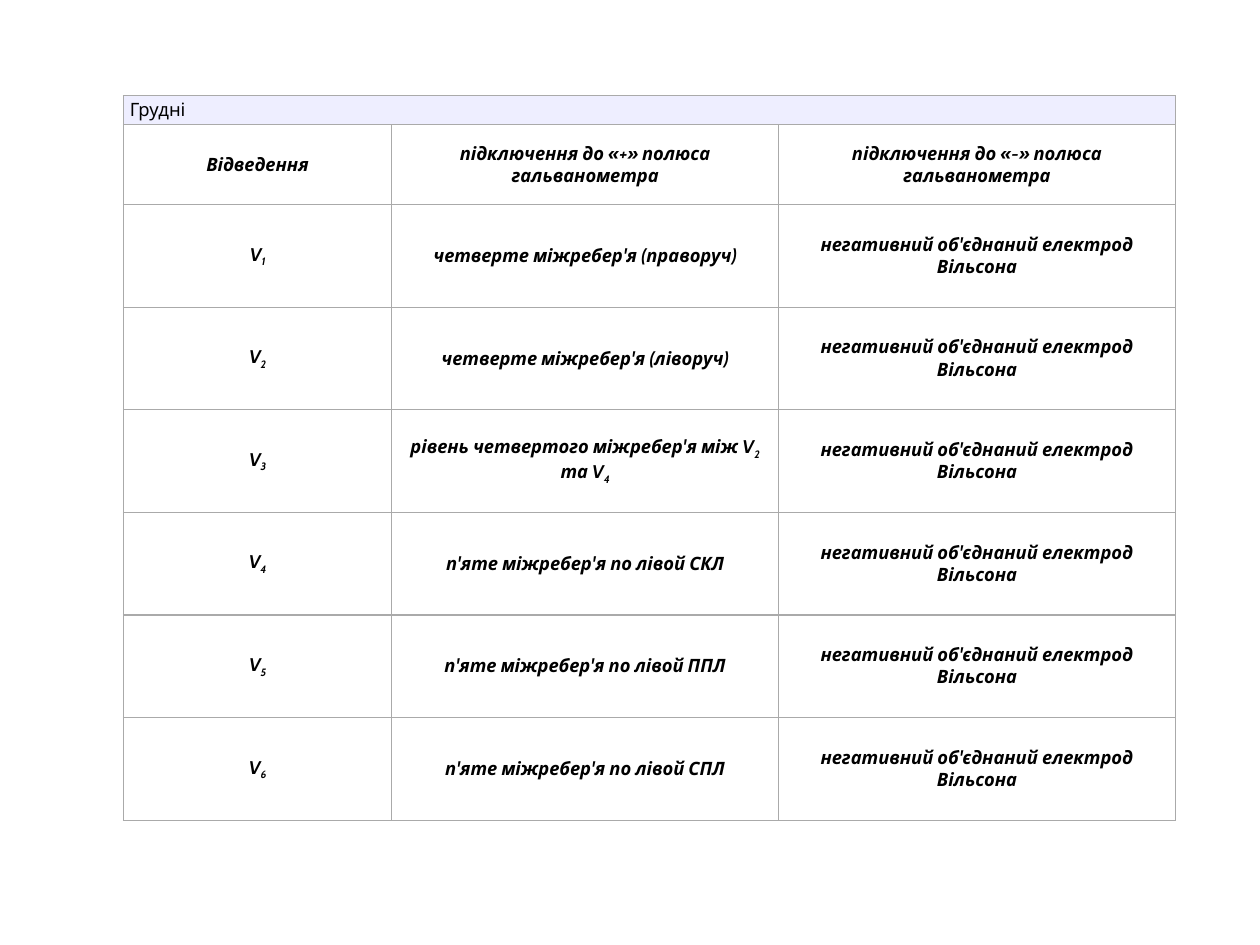
import pptx
import pptx.dml.color
import pptx.enum.text
import pptx.oxml.ns
import pptx.util
from lxml import etree
from pptx.util import Inches

COLORS = {"title": "EEEEFF", "body": "FFFFFF", "border": "AAAAAA", "text": "000000"}
TITLE = "Грудні"
HEADINGS = [
    "Відведення",
    "підключення до «+» полюса гальванометра",
    "підключення до «-» полюса гальванометра",
]
POSITIVE_POINTS = [
    "четверте міжребер'я (праворуч)",
    "четверте міжребер'я (ліворуч)",
    "рівень четвертого міжребер'я між V_2 та V_4",
    "п'яте міжребер'я по лівой СКЛ",
    "п'яте міжребер'я по лівой ППЛ",
    "п'яте міжребер'я по лівой СПЛ",
]
NEGATIVE_POINT = "негативний об'єднаний електрод Вільсона"
COLUMN_WIDTHS = [2.13, 3.07, 3.15]
ROW_HEIGHTS = [0.23, 0.63] + [0.81] * len(POSITIVE_POINTS)


def rgb(name):
    return pptx.dml.color.RGBColor.from_string(COLORS[name])


def add_span(para, text, bold=False, italic=False, subscript=False):
    span = para.add_run()
    span.text = text
    font = span.font
    font.name = "Cabin"
    font.size = pptx.util.Pt(10.5)
    font.bold = bold
    font.italic = italic
    font.color.rgb = rgb("text")
    if subscript:
        font._element.set("baseline", "-25000")


def write_text(para, text, align="CENTER", **style):
    para.alignment = getattr(pptx.enum.text.PP_ALIGN, align)
    first, *rest = text.split("_")
    add_span(para, first, **style)
    for part in rest:
        add_span(para, part[0], subscript=True, **style)
        if part[1:]:
            add_span(para, part[1:], **style)


def set_borders(cell):
    properties = cell._tc.get_or_add_tcPr()
    for side in ("a:lnL", "a:lnR", "a:lnT", "a:lnB"):
        line = etree.SubElement(
            properties, pptx.oxml.ns.qn(side), w=str(pptx.util.Pt(0.75))
        )
        fill = etree.SubElement(line, pptx.oxml.ns.qn("a:solidFill"))
        etree.SubElement(fill, pptx.oxml.ns.qn("a:srgbClr"), val=COLORS["border"])


def format_cell(cell, fill):
    cell.margin_left = cell.margin_right = Inches(0.05)
    cell.margin_top = cell.margin_bottom = Inches(0.02)
    cell.vertical_anchor = pptx.enum.text.MSO_ANCHOR.MIDDLE
    set_borders(cell)
    cell.fill.solid()
    cell.fill.fore_color.rgb = rgb(fill)


def add_leads_table(page, left, top, width, height):
    rows = [HEADINGS] + [
        [f"V_{number}", point, NEGATIVE_POINT]
        for number, point in enumerate(POSITIVE_POINTS, 1)
    ]
    table = page.shapes.add_table(
        len(ROW_HEIGHTS), len(COLUMN_WIDTHS), left, top, width, height
    ).table
    table.first_row = False
    table.horz_banding = False
    for column, share in zip(table.columns, COLUMN_WIDTHS):
        column.width = int(width * share / sum(COLUMN_WIDTHS))
    for row, share in zip(table.rows, ROW_HEIGHTS):
        row.height = int(height * share / sum(ROW_HEIGHTS))

    for cell in table.rows[0].cells:
        format_cell(cell, "title")
    title = table.cell(0, 0)
    title.merge(table.cell(0, len(COLUMN_WIDTHS) - 1))
    write_text(title.text_frame.paragraphs[0], TITLE, align="LEFT")

    for row_index, texts in enumerate(rows, 1):
        for column_index, text in enumerate(texts):
            cell = table.cell(row_index, column_index)
            format_cell(cell, "body")
            write_text(cell.text_frame.paragraphs[0], text, bold=True, italic=True)


def main():
    deck = pptx.Presentation()
    deck.slide_width = Inches(10)
    deck.slide_height = Inches(7.5)
    page = deck.slides.add_slide(deck.slide_layouts[6])
    add_leads_table(page, Inches(0.98), Inches(0.76), Inches(8.35), Inches(5.75))
    deck.save("out.pptx")


if __name__ == "__main__":
    main()
